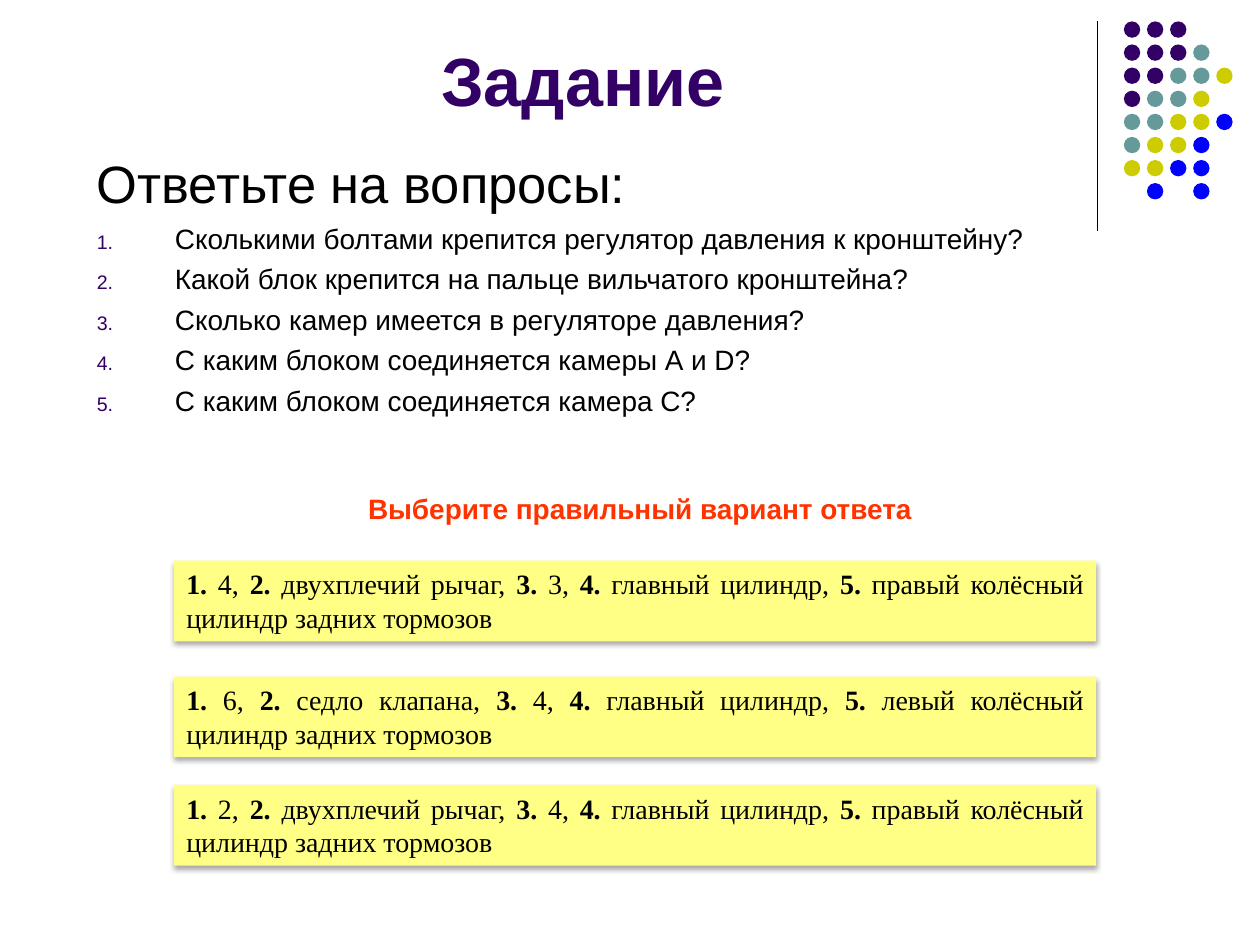
from dataclasses import dataclass

import pptx
import pptx.dml.color
import pptx.enum.shapes
import pptx.enum.text
import pptx.util
from lxml import etree
from pptx.oxml.ns import qn
from pptx.util import Inches, Pt

ALIGN = pptx.enum.text.PP_ALIGN
ANCHOR = pptx.enum.text.MSO_ANCHOR
SHAPE = pptx.enum.shapes.MSO_SHAPE
CONNECTOR = pptx.enum.shapes.MSO_CONNECTOR


@dataclass(frozen=True)
class Theme:
    violet: str = "330066"
    teal: str = "669999"
    olive: str = "CCCC00"
    blue: str = "0000FF"
    black: str = "000000"
    red: str = "FF3300"
    yellow: str = "FFFF85"
    sans: str = "Arial"
    serif: str = "Times New Roman"
    title_size: int = 39
    lead_size: int = 30
    text_size: int = 16


THEME = Theme()
DOT_COLOURS = {"V": THEME.violet, "T": THEME.teal, "O": THEME.olive, "B": THEME.blue}
DOT_ROWS = ["VVV", "VVVT", "VVTTO", "VTTO", "TTOOB", "TOOB", "OOBB", " B B"]

QUESTIONS = [
    "Сколькими болтами крепится регулятор давления к кронштейну?",
    "Какой блок крепится на пальце вильчатого кронштейна?",
    "Сколько камер имеется в регуляторе давления?",
    "С каким блоком соединяется камеры А и D?",
    "С каким блоком соединяется камера С?",
]

# Bold numbers and plain answers take turns.
ANSWERS = [
    (4.45, ["1.", " 4, ", "2.", " двухплечий рычаг, ", "3.", " 3, ", "4.",
            " главный цилиндр, ", "5.", " правый колёсный цилиндр задних тормозов"]),
    (5.37, ["1.", " 6, ", "2.", " седло клапана, ", "3.", " 4, ", "4.",
            " главный цилиндр, ", "5.", " левый колёсный цилиндр задних тормозов"]),
    (6.23, ["1.", " 2, ", "2. ", "двухплечий рычаг, ", "3.", " 4, ", "4.",
            " главный цилиндр, ", "5.", " правый колёсный цилиндр задних тормозов"]),
]


def rgb(colour):
    return pptx.dml.color.RGBColor.from_string(colour)


def add_span(para, text, size, colour=THEME.black, font=THEME.sans, bold=False):
    span = para.add_run()
    span.text = text
    span.font.size = Pt(size)
    span.font.name = font
    span.font.bold = bold
    span.font.color.rgb = rgb(colour)


def add_text_box(page, left, top, width, height, anchor=ANCHOR.TOP):
    box = page.shapes.add_textbox(Inches(left), Inches(top), Inches(width), Inches(height))
    box.text_frame.word_wrap = True
    box.text_frame.vertical_anchor = anchor
    return box.text_frame


def add_dots(page, left, top, pitch, size):
    group = page.shapes.add_group_shape()
    for row, letters in enumerate(DOT_ROWS):
        for column, letter in enumerate(letters):
            if letter == " ":
                continue
            dot = group.shapes.add_shape(
                SHAPE.OVAL, Inches(left + column * pitch), Inches(top + row * pitch),
                Inches(size), Inches(size))
            dot.shadow.inherit = False
            dot.fill.solid()
            dot.fill.fore_color.rgb = rgb(DOT_COLOURS[letter])
            dot.line.fill.background()


def add_ornament(page, left, top, height):
    """Vertical rule with the coloured dots to its right."""
    rule = page.shapes.add_connector(
        CONNECTOR.STRAIGHT, Inches(left), Inches(top), Inches(left), Inches(top + height))
    rule.line.color.rgb = rgb(THEME.black)
    rule.line.width = Pt(0.75)
    etree.SubElement(rule._element.spPr, qn("a:effectLst"))
    add_dots(page, left + 0.21, top, 0.55 / 3, 0.13)


def add_title(page, left, top, width, height):
    para = add_text_box(page, left, top, width, height, ANCHOR.BOTTOM).paragraphs[0]
    para.alignment = ALIGN.CENTER
    add_span(para, "Задание", THEME.title_size, THEME.violet, bold=True)


def number_paragraph(para):
    """Hanging automatic number, smaller than the text and violet."""
    properties = para._p.get_or_add_pPr()
    properties.set("marL", str(Inches(0.62)))
    properties.set("indent", str(Inches(-0.62)))
    colour = etree.SubElement(properties, qn("a:buClr"))
    etree.SubElement(colour, qn("a:srgbClr"), val=THEME.violet)
    etree.SubElement(properties, qn("a:buSzPct"), val="70000")
    etree.SubElement(properties, qn("a:buFont"), typeface=THEME.sans)
    etree.SubElement(properties, qn("a:buAutoNum"), type="arabicPeriod")


def add_questions(page, left, top, width, height):
    frame = add_text_box(page, left, top, width, height)
    lead = frame.paragraphs[0]
    lead.space_before = Pt(4)
    add_span(lead, "Ответьте на вопросы:", THEME.lead_size)
    for question in QUESTIONS:
        para = frame.add_paragraph()
        para.space_before = Pt(4)
        number_paragraph(para)
        add_span(para, question, THEME.text_size)


def add_prompt(page, left, top, width, height):
    para = add_text_box(page, left, top, width, height).paragraphs[0]
    para.alignment = ALIGN.CENTER
    para.space_before = Pt(2)
    add_span(para, "Выберите правильный вариант ответа", THEME.text_size, THEME.red, bold=True)


def add_soft_shadow(box):
    effects = box._element.spPr.find(qn("a:effectLst"))
    shadow = etree.SubElement(
        effects, qn("a:outerShdw"), blurRad=str(Pt(3.1)), dist=str(Pt(1.8)),
        dir="5400000", rotWithShape="0")
    colour = etree.SubElement(shadow, qn("a:srgbClr"), val=THEME.black)
    etree.SubElement(colour, qn("a:alpha"), val="35000")


def add_answer(page, left, top, width, height, parts):
    box = page.shapes.add_shape(
        SHAPE.RECTANGLE, Inches(left), Inches(top), Inches(width), Inches(height))
    box.shadow.inherit = False
    add_soft_shadow(box)
    box.fill.solid()
    box.fill.fore_color.rgb = rgb(THEME.yellow)
    box.line.fill.background()
    box.text_frame.word_wrap = True
    box.text_frame.vertical_anchor = ANCHOR.TOP
    para = box.text_frame.paragraphs[0]
    para.alignment = ALIGN.JUSTIFY
    para.space_before = Pt(2)
    for index, part in enumerate(parts):
        add_span(para, part, THEME.text_size, font=THEME.serif, bold=index % 2 == 0)


def main():
    deck = pptx.Presentation()
    deck.slide_width, deck.slide_height = Inches(10), Inches(7.5)
    page = deck.slides.add_slide(deck.slide_layouts[6])
    add_ornament(page, 8.71, 0.17, 1.66)
    add_title(page, 0.5, -0.42, 8.25, 1.42)
    add_questions(page, 0.67, 1.15, 9, 2.52)
    add_prompt(page, 2.01, 3.85, 6.14, 0.37)
    for top, parts in ANSWERS:
        add_answer(page, 1.38, top, 7.32, 0.64, parts)
    deck.save("out.pptx")


if __name__ == "__main__":
    main()
